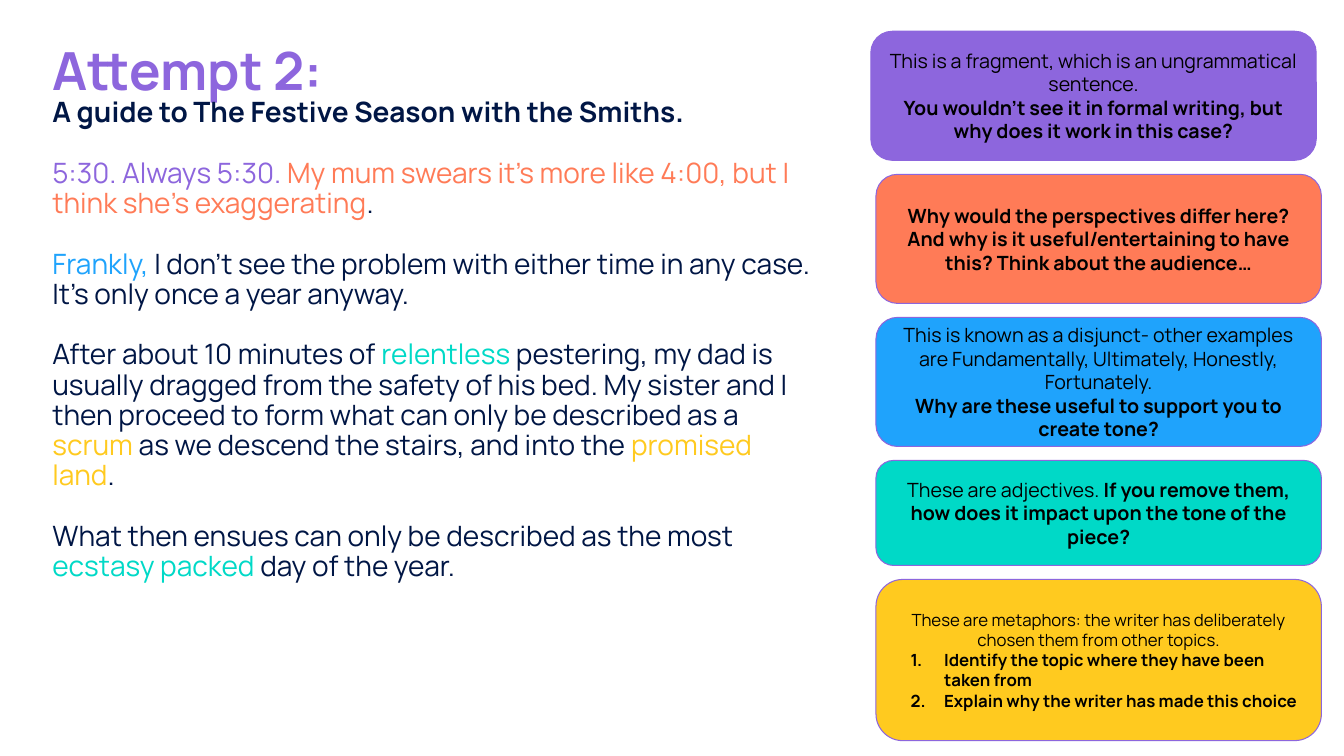
from dataclasses import dataclass

from lxml import etree
from pptx import Presentation
from pptx.dml.color import RGBColor
from pptx.enum.shapes import MSO_SHAPE
from pptx.enum.text import MSO_ANCHOR, MSO_AUTO_SIZE, PP_ALIGN
from pptx.oxml.ns import qn
from pptx.util import Pt

ROUNDED = MSO_SHAPE.ROUNDED_RECTANGLE
TOP, MIDDLE = MSO_ANCHOR.TOP, MSO_ANCHOR.MIDDLE
LEFT, CENTER = PP_ALIGN.LEFT, PP_ALIGN.CENTER
NO_FIT = MSO_AUTO_SIZE.NONE


@dataclass(frozen=True)
class Theme:
    font: str = "Manrope"
    navy: str = "001645"
    black: str = "000000"
    purple: str = "8D66DD"
    coral: str = "FF7B57"
    blue: str = "1FA3FC"
    teal: str = "00D9C7"
    yellow: str = "FFCA1F"
    title_size: float = 37.5
    passage_size: float = 20
    card_size: float = 14
    small_size: float = 12


THEME = Theme()

TITLE = "Attempt 2:"
HEADING = "A guide to The Festive Season with the Smiths."

PASSAGE = [
    [("5:30. Always 5:30. ", THEME.purple),
     ("My mum swears it’s more like 4:00, but I think she’s exaggerating", THEME.coral),
     (".", THEME.navy)],
    [("Frankly, ", THEME.blue),
     ("I don’t see the problem with either time in any case. "
      "It’s only once a year anyway.", THEME.navy)],
    [("After about 10 minutes of ", THEME.navy),
     ("relentless", THEME.teal),
     (" pestering, my dad is usually dragged from the safety of his bed. My sister "
      "and I then proceed to form what can only be described as a ", THEME.navy),
     ("scrum", THEME.yellow),
     (" as we descend the stairs, and into the ", THEME.navy),
     ("promised land", THEME.yellow),
     (".", THEME.navy)],
    [("What then ensues can only be described as the most ", THEME.navy),
     ("ecstasy packed", THEME.teal),
     (" day of the year.", THEME.navy)],
]

CARDS = [
    dict(left=622, height=92.2, fill=THEME.purple, size=THEME.card_size, paragraphs=[
        [("This is a fragment, which is an ungrammatical sentence.", False)],
        [("You wouldn’t see it in formal writing, but why does it work in this case?", True)],
    ]),
    dict(left=625.7, height=92.2, fill=THEME.coral, size=THEME.card_size, paragraphs=[
        [("Why would the perspectives differ here? And why is it useful/entertaining "
          "to have this? Think about the audience…", True)],
    ]),
    dict(left=625.7, height=92.2, fill=THEME.blue, size=THEME.card_size, paragraphs=[
        [("This is known as a disjunct- other examples are Fundamentally, Ultimately, "
          "Honestly, Fortunately.", False)],
        [("Why are these useful to support you to create tone?", True)],
    ]),
    dict(left=625.7, height=75, fill=THEME.teal, size=THEME.card_size, paragraphs=[
        [("These are adjectives. ", False),
         ("If you remove them, how does it impact upon the tone of the piece?", True)],
    ]),
    dict(left=625.7, height=115.2, fill=THEME.yellow, size=THEME.small_size, paragraphs=[
        [("These are metaphors: the writer has deliberately chosen them from other topics.",
          False)],
    ], steps=[
        "Identify the topic where they have been taken from",
        "Explain why the writer has made this choice",
    ]),
]

TEXT_LEFT = 37.4
CARD_TOP, CARD_WIDTH, CARD_GAP = 22.3, 318.2, 10


def rgb(value):
    return RGBColor.from_string(value)


def set_frame(tf, anchor, inset):
    tf.word_wrap = True
    tf.auto_size = NO_FIT
    tf.vertical_anchor = anchor
    tf.margin_left = tf.margin_right = tf.margin_top = tf.margin_bottom = Pt(inset)


def add_text(tf, runs, size, align=LEFT, spacing=1.0, before=0, numbered=False):
    first = not tf.paragraphs[0].runs
    p = tf.paragraphs[0] if first else tf.add_paragraph()
    p.alignment = align
    p.line_spacing = spacing
    p.space_before = Pt(0 if first else before)
    p.space_after = Pt(0)
    if numbered:
        pPr = p._p.get_or_add_pPr()
        pPr.set("marL", str(Pt(36)))
        pPr.set("indent", str(Pt(-24)))
        etree.SubElement(pPr, qn("a:buFont"), typeface=THEME.font)
        etree.SubElement(pPr, qn("a:buAutoNum"), type="arabicPeriod")
    for text, color, bold in runs:
        r = p.add_run()
        r.text = text
        r.font.name = THEME.font
        r.font.size = Pt(size)
        r.font.bold = bold
        r.font.color.rgb = rgb(color)


def add_title(s):
    title = s.shapes.title
    title.left, title.top = Pt(TEXT_LEFT), Pt(18)
    title.width, title.height = Pt(823), Pt(28)
    set_frame(title.text_frame, TOP, 0)
    add_text(title.text_frame, [(TITLE, THEME.purple, True)], THEME.title_size, spacing=1.2)


def add_passage(s):
    box = s.shapes.add_textbox(Pt(TEXT_LEFT), Pt(70.5), Pt(545), Pt(349.2))
    tf = box.text_frame
    set_frame(tf, TOP, 0)
    add_text(tf, [(HEADING, THEME.navy, True)], THEME.passage_size, spacing=0.9)
    for sentence in PASSAGE:
        runs = [(text, color, False) for text, color in sentence]
        add_text(tf, runs, THEME.passage_size, spacing=0.9, before=21.6)


def add_card(s, top, left, height, fill, size, paragraphs, steps=()):
    sp = s.shapes.add_shape(ROUNDED, Pt(left), Pt(top), Pt(CARD_WIDTH), Pt(height))
    sp.shadow.inherit = False
    sp.fill.solid()
    sp.fill.fore_color.rgb = rgb(fill)
    sp.line.color.rgb = rgb(THEME.purple)
    sp.line.width = Pt(0.75)
    tf = sp.text_frame
    set_frame(tf, MIDDLE, 7.2)
    for paragraph in paragraphs:
        runs = [(text, THEME.black, bold) for text, bold in paragraph]
        add_text(tf, runs, size, align=CENTER)
    for step in steps:
        add_text(tf, [(step, THEME.black, True)], size, numbered=True)


def main():
    prs = Presentation()
    prs.slide_width, prs.slide_height = Pt(960), Pt(540)
    s = prs.slides.add_slide(prs.slide_layouts[5])
    add_title(s)
    add_passage(s)
    top = CARD_TOP
    for card in CARDS:
        add_card(s, top, **card)
        top += card["height"] + CARD_GAP
    prs.save("out.pptx")


if __name__ == "__main__":
    main()
